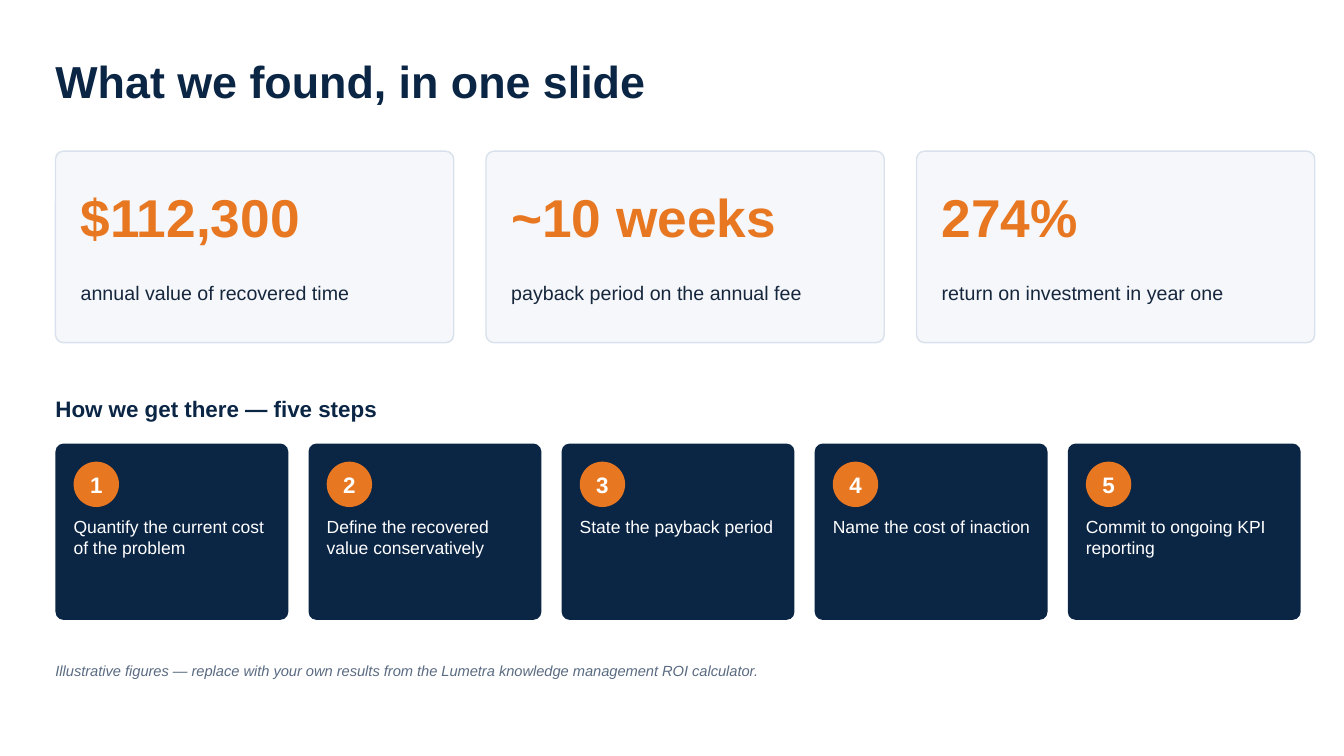
from dataclasses import dataclass

from pptx import Presentation
from pptx.dml.color import RGBColor
from pptx.enum.shapes import MSO_SHAPE
from pptx.enum.text import MSO_ANCHOR, MSO_AUTO_SIZE, PP_ALIGN
from pptx.shapes.autoshape import Shape
from pptx.slide import Slide
from pptx.util import Inches, Pt


@dataclass(frozen=True)
class TextStyle:
    size: float
    color: str
    bold: bool = False
    italic: bool = False
    align: PP_ALIGN = PP_ALIGN.LEFT
    anchor: MSO_ANCHOR = MSO_ANCHOR.MIDDLE


@dataclass(frozen=True)
class Theme:
    font: str = "Arial"
    background: str = "FFFFFF"
    navy: str = "0B2545"
    orange: str = "E87722"
    card_fill: str = "F5F7FA"
    card_line: str = "D9E1EC"
    title: TextStyle = TextStyle(32, "0B2545", bold=True)
    heading: TextStyle = TextStyle(16, "0B2545", bold=True)
    metric: TextStyle = TextStyle(38, "E87722", bold=True)
    caption: TextStyle = TextStyle(14, "16273D")
    number: TextStyle = TextStyle(16, "FFFFFF", bold=True, align=PP_ALIGN.CENTER)
    step: TextStyle = TextStyle(12.5, "FFFFFF", anchor=MSO_ANCHOR.TOP)
    note: TextStyle = TextStyle(10.5, "5A6B82", italic=True)


@dataclass(frozen=True)
class Box:
    left: float
    top: float
    width: float
    height: float

    def lengths(self) -> tuple:
        return tuple(map(Inches, (self.left, self.top, self.width, self.height)))


@dataclass(frozen=True)
class Metric:
    value: str
    caption: str


THEME = Theme()
MARGIN = 0.55
METRIC_PITCH = 4.27
STEP_PITCH = 2.51

METRICS = [
    Metric("$112,300", "annual value of recovered time"),
    Metric("~10 weeks", "payback period on the annual fee"),
    Metric("274%", "return on investment in year one"),
]
STEPS = [
    "Quantify the current cost of the problem",
    "Define the recovered value conservatively",
    "State the payback period",
    "Name the cost of inaction",
    "Commit to ongoing KPI reporting",
]


def write_text(shape: Shape, text: str, style: TextStyle) -> None:
    frame = shape.text_frame
    frame.word_wrap = True
    frame.auto_size = MSO_AUTO_SIZE.NONE
    frame.margin_left = frame.margin_top = frame.margin_right = frame.margin_bottom = 0
    frame.vertical_anchor = style.anchor
    frame.text = text
    paragraph = frame.paragraphs[0]
    paragraph.alignment = style.align
    font = paragraph.font
    font.name = THEME.font
    font.size = Pt(style.size)
    font.bold = style.bold
    font.italic = style.italic
    font.color.rgb = RGBColor.from_string(style.color)


def add_text(slide: Slide, box: Box, text: str, style: TextStyle) -> None:
    write_text(slide.shapes.add_textbox(*box.lengths()), text, style)


def add_filled(slide: Slide, kind: MSO_SHAPE, box: Box, fill: str) -> Shape:
    """Add a preset shape with a solid fill, no outline and no shadow."""
    shape = slide.shapes.add_shape(kind, *box.lengths())
    shape.shadow.inherit = False
    shape.fill.solid()
    shape.fill.fore_color.rgb = RGBColor.from_string(fill)
    shape.line.fill.background()
    return shape


def add_title(slide: Slide, text: str) -> None:
    title = slide.shapes.title
    title.left, title.top, title.width, title.height = Box(MARGIN, 0.45, 12, 0.7).lengths()
    write_text(title, text, THEME.title)


def add_metric(slide: Slide, left: float, metric: Metric) -> None:
    card = add_filled(slide, MSO_SHAPE.ROUNDED_RECTANGLE, Box(left, 1.5, 3.95, 1.9), THEME.card_fill)
    card.adjustments[0] = 0.042
    card.line.color.rgb = RGBColor.from_string(THEME.card_line)
    card.line.width = Pt(1)
    add_text(slide, Box(left + 0.25, 1.72, 3.45, 0.85), metric.value, THEME.metric)
    add_text(slide, Box(left + 0.25, 2.6, 3.45, 0.6), metric.caption, THEME.caption)


def add_step(slide: Slide, left: float, number: int, text: str) -> None:
    card = add_filled(slide, MSO_SHAPE.ROUNDED_RECTANGLE, Box(left, 4.4, 2.31, 1.75), THEME.navy)
    card.adjustments[0] = 0.046
    badge = add_filled(slide, MSO_SHAPE.OVAL, Box(left + 0.18, 4.58, 0.45, 0.45), THEME.orange)
    write_text(badge, str(number), THEME.number)
    add_text(slide, Box(left + 0.18, 5.12, 1.98, 0.95), text, THEME.step)


def main() -> None:
    presentation = Presentation()
    presentation.slide_width = Inches(13.33)
    presentation.slide_height = Inches(7.5)
    slide = presentation.slides.add_slide(presentation.slide_layouts.get_by_name("Title Only"))
    slide.background.fill.solid()
    slide.background.fill.fore_color.rgb = RGBColor.from_string(THEME.background)

    add_title(slide, "What we found, in one slide")
    for index, metric in enumerate(METRICS):
        add_metric(slide, MARGIN + index * METRIC_PITCH, metric)
    add_text(slide, Box(MARGIN, 3.85, 12, 0.4), "How we get there — five steps", THEME.heading)
    for index, text in enumerate(STEPS):
        add_step(slide, MARGIN + index * STEP_PITCH, index + 1, text)
    add_text(
        slide,
        Box(MARGIN, 6.5, 12.2, 0.3),
        "Illustrative figures — replace with your own results from the "
        "Lumetra knowledge management ROI calculator.",
        THEME.note,
    )
    presentation.save("out.pptx")


if __name__ == "__main__":
    main()
